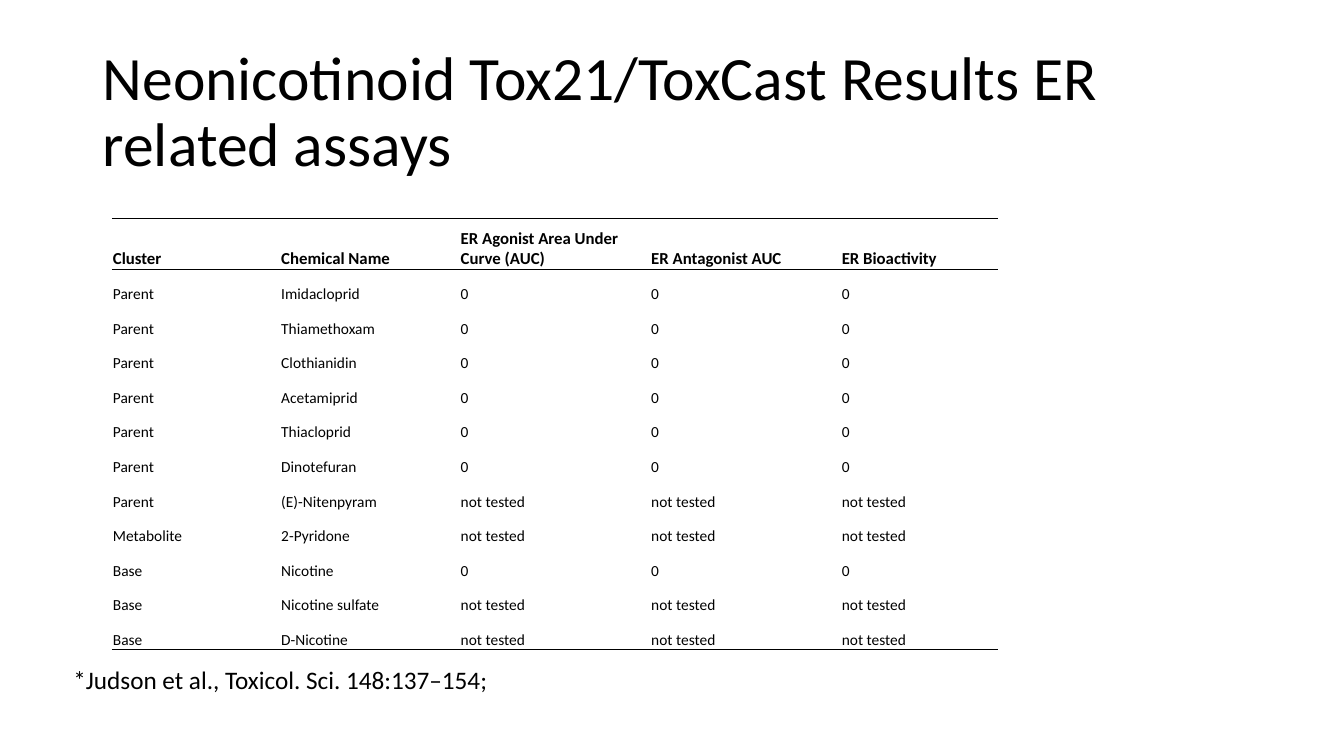
from lxml import etree
from pptx import Presentation
from pptx.dml.color import RGBColor
from pptx.enum.text import MSO_ANCHOR, MSO_AUTO_SIZE
from pptx.oxml.ns import qn
from pptx.util import Inches, Pt

TOP, MIDDLE, BOTTOM = MSO_ANCHOR.TOP, MSO_ANCHOR.MIDDLE, MSO_ANCHOR.BOTTOM
GROW = MSO_AUTO_SIZE.SHAPE_TO_FIT_TEXT
BLANK_LAYOUT = 6

HEADER = ["Cluster", "Chemical Name", "ER Agonist Area Under Curve (AUC)",
          "ER Antagonist AUC", "ER Bioactivity"]
CHEMICALS = [
    ("Parent", "Imidacloprid", "0"),
    ("Parent", "Thiamethoxam", "0"),
    ("Parent", "Clothianidin", "0"),
    ("Parent", "Acetamiprid", "0"),
    ("Parent", "Thiacloprid", "0"),
    ("Parent", "Dinotefuran", "0"),
    ("Parent", "(E)-Nitenpyram", "not tested"),
    ("Metabolite", "2-Pyridone", "not tested"),
    ("Base", "Nicotine", "0"),
    ("Base", "Nicotine sulfate", "not tested"),
    ("Base", "D-Nicotine", "not tested"),
]
COLUMN_WIDTHS = [1.67, 1.78, 1.89, 1.89, 1.56]
TABLE_HEIGHT = 4.28
HEADER_HEIGHT = 0.5


def color(value):
    return RGBColor.from_string(value)


def write(frame, text, size=18, bold=False, font="Calibri", ink="000000", spacing=None):
    para = frame.paragraphs[0]
    para.line_spacing = spacing
    span = para.add_run()
    span.text = text
    span.font.name = font
    span.font.size = Pt(size)
    span.font.bold = bold
    span.font.color.rgb = color(ink)


def set_borders(cell, ruled_sides, ink="000000", width=0.5):
    """Rule the given sides (of L, R, T, B) and clear the others."""
    properties = cell._tc.get_or_add_tcPr()
    for side in "LRTB":
        line = etree.SubElement(properties, qn(f"a:ln{side}"), w=str(Pt(width)))
        if side in ruled_sides:
            fill = etree.SubElement(line, qn("a:solidFill"))
            etree.SubElement(fill, qn("a:srgbClr"), val=ink)
        else:
            etree.SubElement(line, qn("a:noFill"))


class SlideBuilder:
    def __init__(self, slide):
        self.slide = slide

    def text(self, text, left, top, width, height, anchor=TOP, grow=False, **style):
        box = self.slide.shapes.add_textbox(
            Inches(left), Inches(top), Inches(width), Inches(height))
        frame = box.text_frame
        frame.word_wrap = True
        frame.vertical_anchor = anchor
        if grow:
            frame.auto_size = GROW
        write(frame, text, **style)

    def cell(self, cell, text, ruled_sides, **style):
        cell.margin_left = cell.margin_top = cell.margin_right = Inches(0.01)
        cell.margin_bottom = 0
        cell.vertical_anchor = BOTTOM
        set_borders(cell, ruled_sides)
        cell.fill.background()
        write(cell.text_frame, text, **style)

    def table(self, rows, left, top, widths, height, header_height):
        table = self.slide.shapes.add_table(
            len(rows), len(widths), Inches(left), Inches(top),
            Inches(sum(widths)), Inches(height)).table
        table.first_row = table.horz_banding = False
        for column, width in zip(table.columns, widths):
            column.width = Inches(width)
        last = len(rows) - 1
        body_height = (height - header_height) / last
        for index, values in enumerate(rows):
            is_header = index == 0
            table.rows[index].height = Inches(header_height if is_header else body_height)
            ruled_sides = {0: "TB", 1: "T", last: "B"}.get(index, "")
            for number, value in enumerate(values):
                self.cell(table.cell(index, number), value, ruled_sides,
                          size=12 if is_header else 11, bold=is_header)


def main():
    deck = Presentation()
    deck.slide_width, deck.slide_height = Inches(13.33), Inches(7.5)
    page = SlideBuilder(deck.slides.add_slide(deck.slide_layouts[BLANK_LAYOUT]))

    page.text("Neonicotinoid Tox21/ToxCast Results ER related assays",
              0.92, 0.4, 11.5, 1.45, anchor=MIDDLE, size=44, spacing=0.9)
    # Each chemical has the same result in all three assays.
    rows = [HEADER] + [[cluster, name] + [result] * 3
                       for cluster, name, result in CHEMICALS]
    page.table(rows, 1.11, 2.17, COLUMN_WIDTHS, TABLE_HEIGHT, HEADER_HEIGHT)
    page.text("*Judson et al., Toxicol. Sci. 148:137–154;",
              0.63, 6.54, 9.57, 0.4, grow=True)
    deck.save("out.pptx")


if __name__ == "__main__":
    main()
